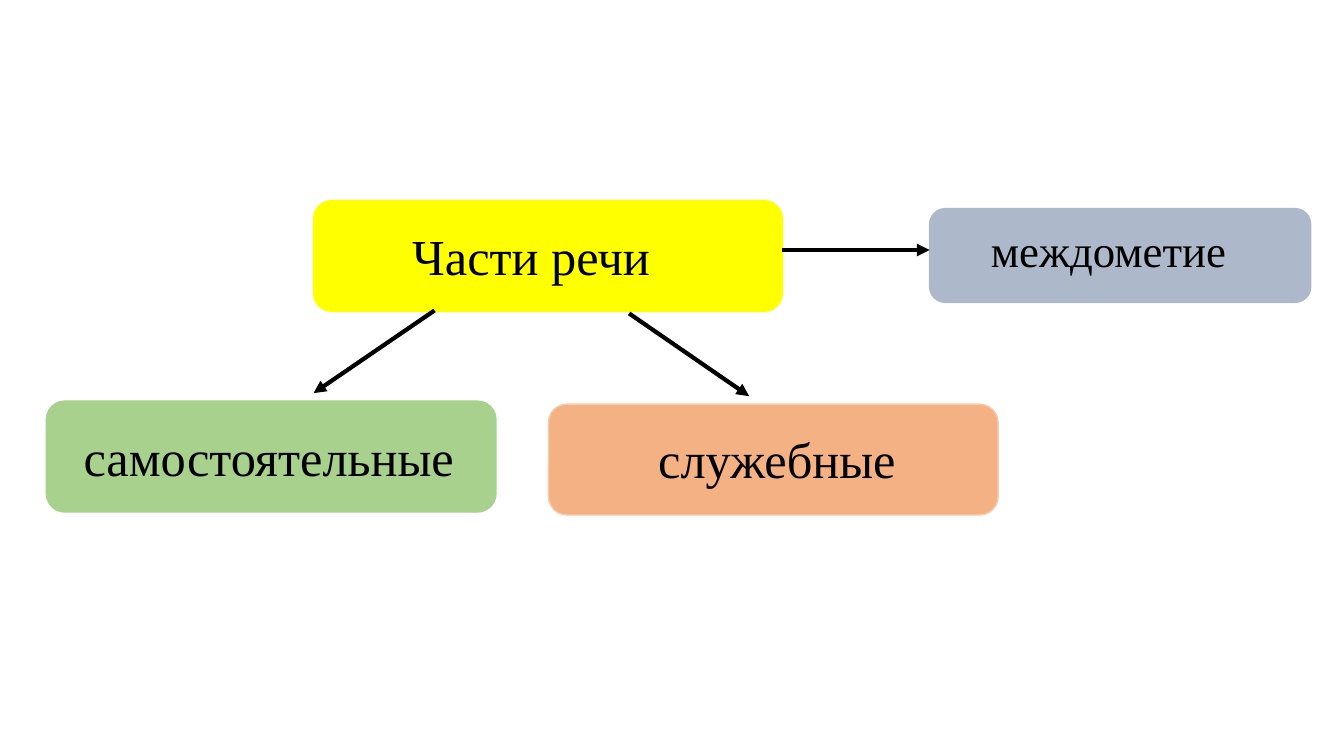
from dataclasses import dataclass

from lxml.etree import SubElement
from pptx import Presentation
from pptx.dml.color import RGBColor
from pptx.enum.shapes import MSO_CONNECTOR, MSO_SHAPE
from pptx.enum.text import MSO_AUTO_SIZE
from pptx.oxml.ns import qn
from pptx.slide import Slide
from pptx.util import Inches, Pt

BLACK = RGBColor(0x00, 0x00, 0x00)
YELLOW = RGBColor(0xFF, 0xFF, 0x00)
GREEN = RGBColor(0xA9, 0xD1, 0x8E)
ORANGE = RGBColor(0xF4, 0xB1, 0x83)
PEACH = RGBColor(0xF8, 0xCB, 0xAD)
GREY = RGBColor(0xAD, 0xB9, 0xCA)
FONT = "Times New Roman"

Area = tuple[float, float, float, float]
Point = tuple[float, float]


@dataclass(frozen=True)
class Card:
    text: str
    size: int
    area: Area
    label: Area
    fill: RGBColor
    edge: RGBColor


@dataclass(frozen=True)
class Arrow:
    start: Point
    end: Point


CARDS = [
    Card("Части речи", 36, (3.11, 1.99, 4.65, 1.1),
         (3.99, 2.18, 3.78, 0.71), YELLOW, YELLOW),
    Card("самостоятельные", 36, (0.46, 3.98, 4.46, 1.1),
         (0.73, 4.18, 3.92, 0.71), GREEN, GREEN),
    Card("служебные", 36, (5.44, 4.01, 4.46, 1.1),
         (6.43, 4.2, 3.19, 0.71), ORANGE, PEACH),
    Card("междометие", 32, (9.22, 2.07, 3.78, 0.93),
         (9.73, 2.16, 2.94, 0.64), GREY, GREY),
]

ARROWS = [
    Arrow((4.31, 3.08), (3.11, 3.9)),
    Arrow((7.76, 2.48), (9.22, 2.48)),
    Arrow((6.24, 3.11), (7.43, 3.93)),
]


def draw_card(slide: Slide, card: Card) -> None:
    box = slide.shapes.add_shape(
        MSO_SHAPE.ROUNDED_RECTANGLE, *map(Inches, card.area))
    box.shadow.inherit = False
    box.fill.solid()
    box.fill.fore_color.rgb = card.fill
    box.line.color.rgb = card.edge
    box.line.width = Pt(1)

    frame = slide.shapes.add_textbox(*map(Inches, card.label)).text_frame
    frame.word_wrap = True
    frame.auto_size = MSO_AUTO_SIZE.SHAPE_TO_FIT_TEXT
    run = frame.paragraphs[0].add_run()
    run.text = card.text
    run.font.name = FONT
    run.font.size = Pt(card.size)
    run.font.color.rgb = BLACK


def draw_arrow(slide: Slide, arrow: Arrow) -> None:
    link = slide.shapes.add_connector(
        MSO_CONNECTOR.STRAIGHT, *map(Inches, arrow.start + arrow.end))
    link.line.color.rgb = BLACK
    link.line.width = Pt(3)
    SubElement(link.line._get_or_add_ln(), qn("a:tailEnd"), type="triangle")
    SubElement(link._element.spPr, qn("a:effectLst"))


def main() -> None:
    deck = Presentation()
    deck.slide_width = Inches(13.33)
    deck.slide_height = Inches(7.5)
    slide = deck.slides.add_slide(deck.slide_layouts.get_by_name("Blank"))
    for card in CARDS:
        draw_card(slide, card)
    for arrow in ARROWS:
        draw_arrow(slide, arrow)
    deck.save("out.pptx")


if __name__ == "__main__":
    main()
